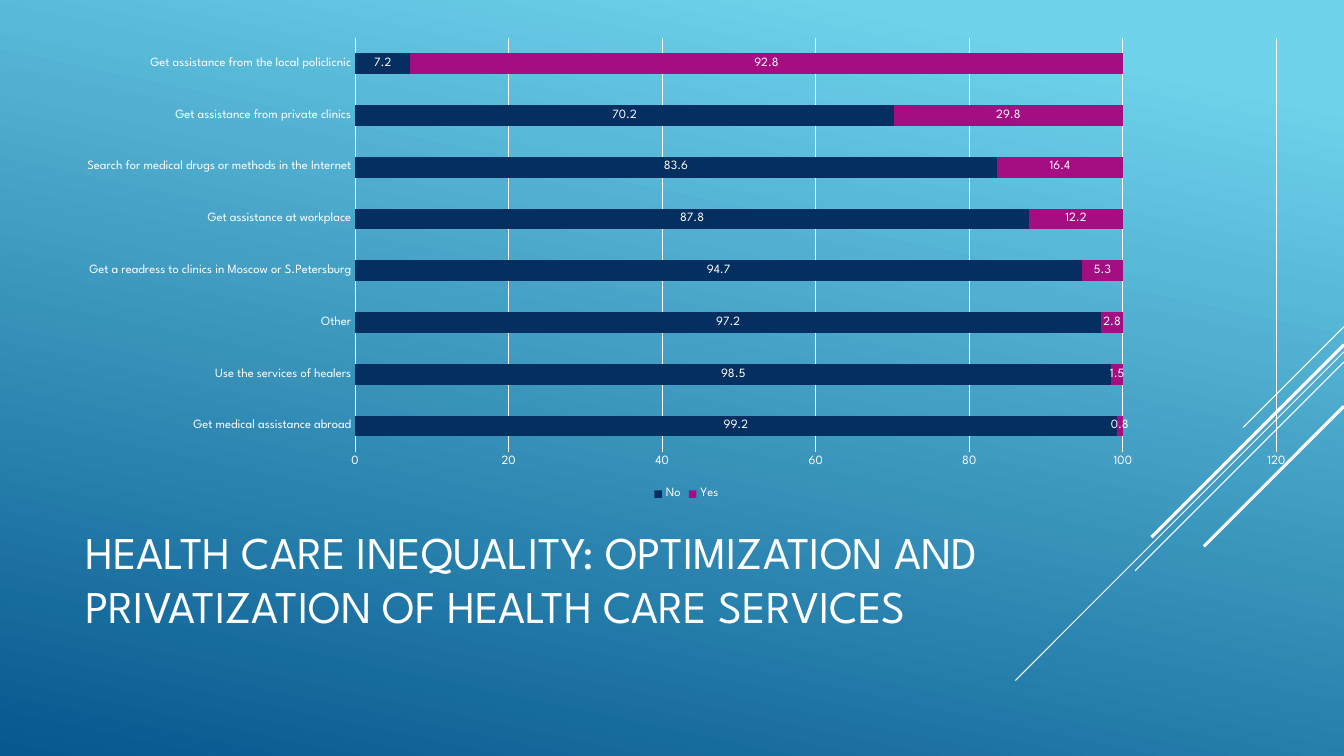
from dataclasses import dataclass

from lxml import etree
from pptx import Presentation
from pptx import util as u
from pptx.chart import data as cd
from pptx.dml import color
from pptx.enum import chart as ch, shapes, text
from pptx.oxml import ns

Pt = u.Pt


@dataclass(frozen=True)
class Theme:
    font: str = "League Spartan"
    white: str = "FFFFFF"
    navy: str = "052F61"
    plum: str = "A50E82"
    sky: str = "6ED2EB"
    deep: str = "06588E"
    title: float = 32.4
    base: float = 10
    label: float = 9
    thin: float = 0.75
    thick: float = 2.25


T = Theme()
WIDTH, HEIGHT = 960, 540

TITLE = ("HEALTH CARE INEQUALITY: OPTIMIZATION AND "
         "PRIVATIZATION OF HEALTH CARE SERVICES")

# Answer, share of "No", share of "Yes", from the bottom bar up
ROWS = [
    ("Get medical assistance abroad", 99.2, 0.8),
    ("Use the services of healers", 98.5, 1.5),
    ("Other", 97.2, 2.8),
    ("Get a readress to clinics in Moscow or S.Petersburg", 94.7, 5.3),
    ("Get assistance at workplace", 87.8, 12.2),
    ("Search for medical drugs or methods in the Internet", 83.6, 16.4),
    ("Get assistance from private clinics", 70.2, 29.8),
    ("Get assistance from the local policlicnic", 7.2, 92.8),
]

# Height at the right edge, run down to the left, line width
RAYS = [
    (233.3, 72, T.thin),
    (251.3, 234.7, T.thin),
    (258.5, 149.2, T.thin),
    (246.2, 137.5, T.thick),
    (290.2, 100.1, T.thick),
]


def rgb(code):
    return color.RGBColor.from_string(code)


def style(font, size, tint=T.white):
    font.name = T.font
    font.size = Pt(size)
    font.bold = False
    font.color.rgb = rgb(tint)


def stroke(line, width=T.thin, tint=T.white):
    line.color.rgb = rgb(tint)
    line.width = Pt(width)


def paint(slide):
    fill = slide.background.fill
    fill.gradient()
    fill.gradient_angle = 258
    stops = [(0.1, T.sky), (1, T.deep)]
    for stop, (place, tint) in zip(fill.gradient_stops, stops):
        stop.position = place
        stop.color.rgb = rgb(tint)


def add_ray(slide, top, run, width):
    """Draw a 45-degree line from the right edge."""
    ray = slide.shapes.add_connector(
        shapes.MSO_CONNECTOR.STRAIGHT,
        Pt(WIDTH), Pt(top), Pt(WIDTH - run), Pt(top + run))
    stroke(ray.line, width)
    etree.SubElement(ray._element.spPr, ns.qn("a:effectLst"))


def add_text(slide, words, *, left, top, width, height, size,
             tint=T.white, anchor=text.MSO_ANCHOR.MIDDLE):
    box = slide.shapes.add_textbox(Pt(left), Pt(top), Pt(width), Pt(height))
    frame = box.text_frame
    frame.word_wrap = True
    frame.vertical_anchor = anchor
    run = frame.paragraphs[0].add_run()
    run.text = words
    style(run.font, size, tint)


def add_bars(slide, left, top, width, height):
    names, no, yes = zip(*ROWS)
    data = cd.CategoryChartData()
    data.categories = names
    data.add_series("No", no)
    data.add_series("Yes", yes, number_format="###0.0")
    chart = slide.shapes.add_chart(
        ch.XL_CHART_TYPE.BAR_STACKED,
        Pt(left), Pt(top), Pt(width), Pt(height), data).chart
    style(chart.font, T.base)
    chart.has_title = False

    # Legend
    chart.has_legend = True
    chart.legend.position = ch.XL_LEGEND_POSITION.BOTTOM
    chart.legend.include_in_layout = False
    style(chart.legend.font, T.label)

    # Axes
    cats, vals = chart.category_axis, chart.value_axis
    for axis in (cats, vals):
        axis.major_tick_mark = ch.XL_TICK_MARK.NONE
        axis.minor_tick_mark = ch.XL_TICK_MARK.NONE
        style(axis.tick_labels.font, T.label)
    stroke(cats.format.line)
    vals.format.line.fill.background()
    vals.has_major_gridlines = True
    stroke(vals.major_gridlines.format.line)
    vals.minimum_scale, vals.maximum_scale, vals.major_unit = 0, 120, 20

    # Bars
    plot = chart.plots[0]
    plot.gap_width, plot.overlap = 150, 100
    plot.vary_by_categories = False
    for series, tint in zip(plot.series, (T.navy, T.plum)):
        series.format.fill.solid()
        series.format.fill.fore_color.rgb = rgb(tint)
        labels = series.data_labels
        labels.show_value = True
        labels.number_format = "###0.0"
        labels.number_format_is_linked = False
        labels.position = ch.XL_LABEL_POSITION.CENTER
        style(labels.font, T.label)


def main():
    deck = Presentation()
    deck.slide_width, deck.slide_height = Pt(WIDTH), Pt(HEIGHT)
    slide = deck.slides.add_slide(deck.slide_layouts[6])
    paint(slide)
    for ray in RAYS:
        add_ray(slide, *ray)
    add_text(slide, TITLE, left=54, top=353.5, width=672, height=119,
             size=T.title)
    add_bars(slide, left=44.6, top=20.2, width=891.4, height=339.8)
    deck.save("out.pptx")


if __name__ == "__main__":
    main()
